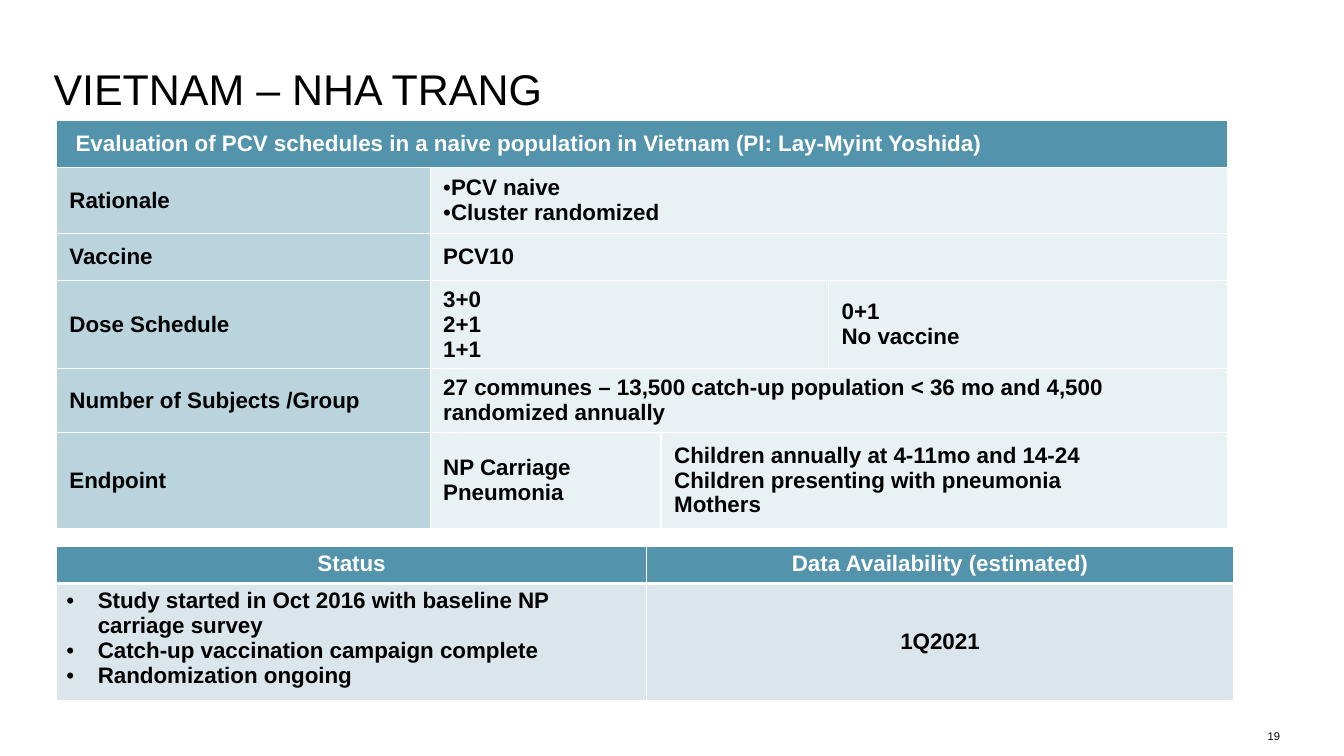
from lxml import etree
from pptx import Presentation
from pptx import util as u
from pptx.dml.color import RGBColor
from pptx.enum import text
from pptx.oxml import ns

BLACK = RGBColor(0x00, 0x00, 0x00)
WHITE = RGBColor(0xFF, 0xFF, 0xFF)
HEADER_TEAL = RGBColor(0x53, 0x93, 0xAB)
LABEL_TEAL = RGBColor(0xBA, 0xD4, 0xDD)
VALUE_TEAL = RGBColor(0xE8, 0xF1, 0xF4)
STATUS_TEAL = RGBColor(0xDA, 0xE6, 0xEB)

MIDDLE = text.MSO_ANCHOR.MIDDLE
CENTER = text.PP_ALIGN.CENTER
STUDY_MARGINS = dict(margin_left=u.Cm(0.33), margin_right=u.Cm(0.33),
                     margin_top=u.Cm(0.17), margin_bottom=u.Cm(0.17))
NO_MARGINS = dict.fromkeys(STUDY_MARGINS, 0)

# Each row: label, then (first column, last column, lines) for its values
STUDY_ROWS = [
    ("Rationale", [(1, 3, ["PCV naive", "Cluster randomized"])]),
    ("Vaccine", [(1, 3, ["PCV10"])]),
    ("Dose Schedule", [(1, 2, ["3+0", "2+1", "1+1"]),
                       (3, 3, ["0+1", "No vaccine"])]),
    ("Number of Subjects /Group", [
        (1, 3, ["27 communes – 13,500 catch-up population < 36 mo and 4,500 "
                "randomized annually"])]),
    ("Endpoint", [(1, 1, ["NP Carriage", "Pneumonia"]),
                  (2, 3, ["Children annually at 4-11mo and 14-24",
                          "Children presenting with pneumonia", "Mothers"])]),
]
STATUS_LINES = ["Study started in Oct 2016 with baseline NP carriage survey",
                "Catch-up vaccination campaign complete",
                "Randomization ongoing"]


def apply_format(target, values):
    for name, value in values.items():
        setattr(target, name, value)


def write_lines(frame, lines, color, size=16, bold=True, **para_format):
    for index, line in enumerate(lines):
        para = frame.add_paragraph() if index else frame.paragraphs[0]
        apply_format(para, para_format)
        span = para.add_run()
        span.text = line
        apply_format(span.font, dict(name="Arial", size=u.Pt(size), bold=bold))
        span.font.color.rgb = color


def add_bullets(frame, hanging=0):
    for para in frame.paragraphs:
        props = para._p.get_or_add_pPr()
        props.set("marL", str(hanging))
        props.set("indent", str(-hanging))
        etree.SubElement(props, ns.qn("a:buFont")).set("typeface", "Arial")
        etree.SubElement(props, ns.qn("a:buChar")).set("char", "•")


def add_borders(cell, top=1, bottom=1):
    props = cell._tc.get_or_add_tcPr()
    for side, points in dict(lnL=1, lnR=1, lnT=top, lnB=bottom).items():
        line = etree.SubElement(props, ns.qn("a:" + side), w=str(u.Pt(points)))
        fill = etree.SubElement(line, ns.qn("a:solidFill"))
        etree.SubElement(fill, ns.qn("a:srgbClr"), val=str(WHITE))


def fill_cell(cell, lines, fill, color=BLACK, cell_format=None, **para_format):
    apply_format(cell, dict(vertical_anchor=MIDDLE) | (cell_format or {}))
    cell.fill.solid()
    cell.fill.fore_color.rgb = fill
    write_lines(cell.text_frame, lines, color, **para_format)


def add_grid(page, left, top, widths, heights):
    """Add a table whose column widths and row heights are in centimetres."""
    table = page.shapes.add_table(
        len(heights), len(widths), u.Cm(left), u.Cm(top),
        u.Cm(sum(widths)), u.Cm(sum(heights))).table
    for column, width in zip(table.columns, widths):
        column.width = u.Cm(width)
    for row, height in zip(table.rows, heights):
        row.height = u.Cm(height)
    return table


def add_study_table(page, left, top):
    table = add_grid(page, left, top, [9.42, 5.82, 4.22, 10.06],
                     [1.19, 1.65, 1.19, 2.22, 1.6, 2.42])
    for cell in table.iter_cells():
        add_borders(cell)
    table.cell(0, 0).merge(table.cell(0, 3))
    fill_cell(table.cell(0, 0),
              [" Evaluation of PCV schedules in a naive population in Vietnam "
               "(PI: Lay-Myint Yoshida)"],
              HEADER_TEAL, WHITE, STUDY_MARGINS)
    for row, (label, values) in enumerate(STUDY_ROWS, 1):
        fill_cell(table.cell(row, 0), [label], LABEL_TEAL,
                  cell_format=STUDY_MARGINS)
        for first, last, lines in values:
            cell = table.cell(row, first)
            if last > first:
                cell.merge(table.cell(row, last))
            fill_cell(cell, lines, VALUE_TEAL, cell_format=STUDY_MARGINS)
    add_bullets(table.cell(1, 1).text_frame)


def add_status_table(page, left, top):
    table = add_grid(page, left, top, [14.88, 14.78], [0.86, 2.77])
    for column, heading in enumerate(["Status", "Data Availability (estimated)"]):
        add_borders(table.cell(0, column), bottom=3)
        add_borders(table.cell(1, column), top=3)
        fill_cell(table.cell(0, column), [heading], HEADER_TEAL, WHITE,
                  dict(vertical_anchor=text.MSO_ANCHOR.TOP), alignment=CENTER)
    fill_cell(table.cell(1, 0), STATUS_LINES, STATUS_TEAL,
              cell_format=dict(vertical_anchor=text.MSO_ANCHOR.TOP))
    add_bullets(table.cell(1, 0).text_frame, u.Cm(0.79))
    fill_cell(table.cell(1, 1), ["1Q2021"], STATUS_TEAL, alignment=CENTER)


def add_label(page, left, top, width, height, words, size, anchor, **para_format):
    box = page.shapes.add_textbox(*map(u.Cm, (left, top, width, height)))
    apply_format(box.text_frame,
                 NO_MARGINS | dict(word_wrap=True, vertical_anchor=anchor))
    write_lines(box.text_frame, [words], BLACK, size, False, **para_format)


def main():
    deck = Presentation()
    apply_format(deck, dict(slide_width=u.Cm(33.87), slide_height=u.Cm(19.05)))
    page = deck.slides.add_slide(deck.slide_layouts[6])
    add_study_table(page, 1.42, 3.04)
    add_label(page, 31.55, 18.14, 0.71, 0.58, "19", 8,
              text.MSO_ANCHOR.BOTTOM, alignment=text.PP_ALIGN.RIGHT)
    add_label(page, 1.35, 1.8, 30.86, 1.93, "VIETNAM – NHA TRANG", 30.7,
              text.MSO_ANCHOR.TOP, line_spacing=u.Pt(30.7))
    add_status_table(page, 1.42, 13.77)
    deck.save("out.pptx")


if __name__ == "__main__":
    main()
